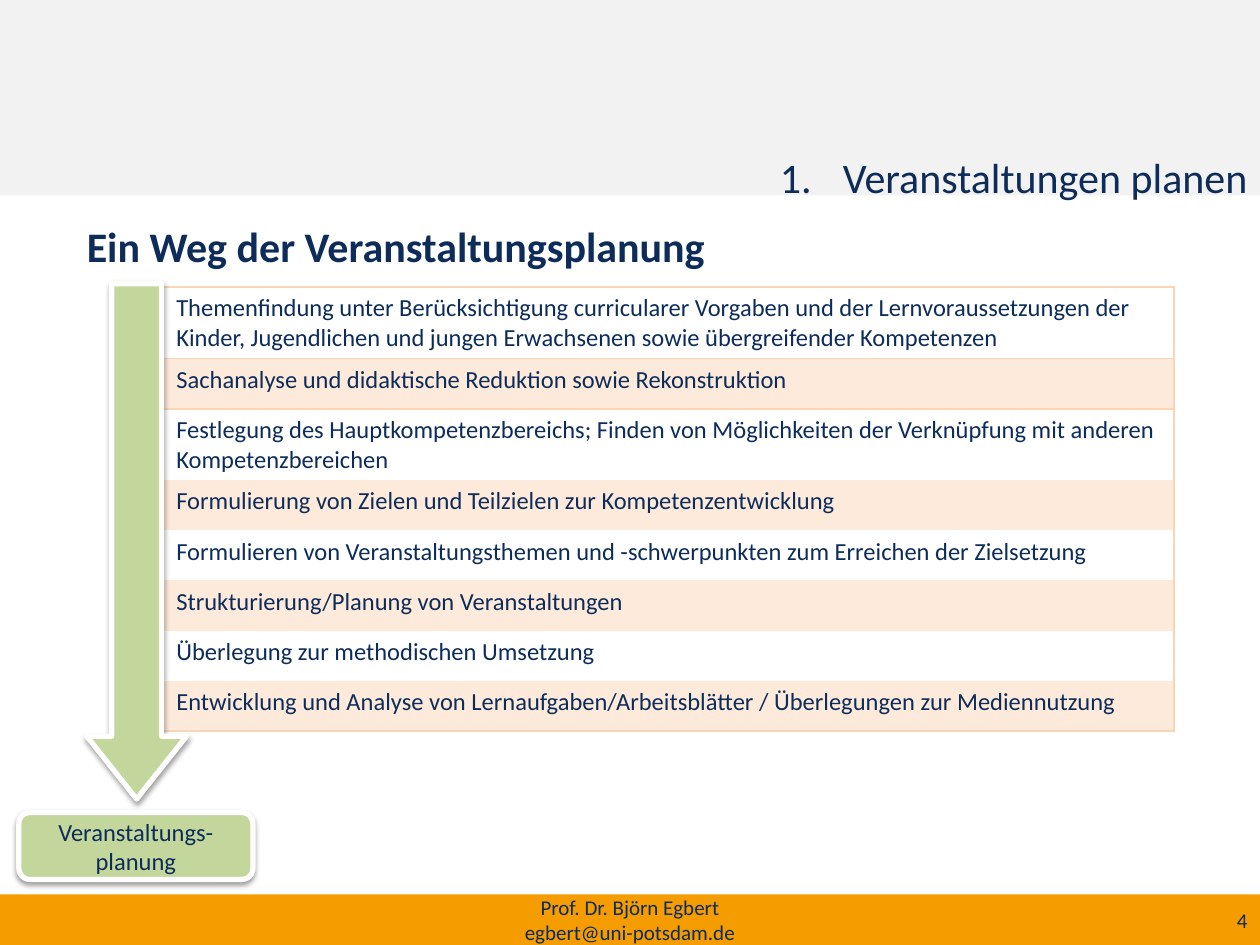
from dataclasses import dataclass
from lxml.etree import SubElement as Sub
from pptx import Presentation
from pptx.dml.color import RGBColor as Rgb
from pptx.enum.shapes import MSO_SHAPE as Kind
from pptx.enum.text import MSO_ANCHOR as Anchor, PP_ALIGN as Align
from pptx.oxml.ns import qn
from pptx.util import Cm, Pt


@dataclass(frozen=True)
class Theme:
    face: str = "Calibri"
    ink: str = "0D2C5A"
    white: str = "FFFFFF"
    grey: str = "F2F2F2"
    amber: str = "F59C00"
    green: str = "C3D69B"
    peach: str = "FDEADA"
    rule: str = "FCD5B5"
    head: int = 24
    body: int = 14
    small: int = 12


LOOK = Theme()
STEPS = [
    "Themenfindung unter Berücksichtigung curricularer Vorgaben und der Lernvoraussetzungen der "
    "Kinder, Jugendlichen und jungen Erwachsenen sowie übergreifender Kompetenzen",
    "Sachanalyse und didaktische Reduktion sowie Rekonstruktion",
    "Festlegung des Hauptkompetenzbereichs; Finden von Möglichkeiten der Verknüpfung mit anderen "
    "Kompetenzbereichen",
    "Formulierung von Zielen und Teilzielen zur Kompetenzentwicklung",
    "Formulieren von Veranstaltungsthemen und -schwerpunkten zum Erreichen der Zielsetzung",
    "Strukturierung/Planung von Veranstaltungen",
    "Überlegung zur methodischen Umsetzung",
    "Entwicklung und Analyse von Lernaufgaben/Arbeitsblätter / Überlegungen zur Mediennutzung",
]


def paint(fill, tone):
    fill.solid()
    fill.fore_color.rgb = Rgb.from_string(tone)


def write(frame, text, size, align=Align.LEFT, anchor=Anchor.TOP, bold=False):
    frame.word_wrap = True
    frame.vertical_anchor = anchor
    frame.text = text
    for para in frame.paragraphs:
        para.alignment = align
        for run in para.runs:
            font = run.font
            font.name, font.size, font.bold = LOOK.face, Pt(size), bold
            font.color.rgb = Rgb.from_string(LOOK.ink)


def add_text(slide, box, text, size, **style):
    frame = slide.shapes.add_textbox(*map(Cm, box)).text_frame
    write(frame, text, size, **style)
    return frame


def add_form(slide, kind, box, tone):
    form = slide.shapes.add_shape(kind, *map(Cm, box))
    form.shadow.inherit = False
    paint(form.fill, tone)
    form.line.fill.background()
    return form


def lift(form):
    paint(form.line.fill, LOOK.white)
    form.line.width = Pt(3)
    glow = form.element.spPr.find(qn("a:effectLst"))
    drop = Sub(glow, qn("a:outerShdw"), blurRad=str(Pt(3.1)), dist=str(Pt(1.6)),
               dir="5400000", rotWithShape="0")
    tone = Sub(drop, qn("a:srgbClr"), val="000000")
    Sub(tone, qn("a:alpha"), val="38000")


def add_head(slide, box):
    x, y, w, h = box
    add_form(slide, Kind.RECTANGLE, box, LOOK.grey)
    frame = add_text(slide, (x + 3.51, y + 2.92, w - 3.51, 1.6),
                     "Veranstaltungen planen", LOOK.head, align=Align.RIGHT)
    props = frame.paragraphs[0]._p.get_or_add_pPr()
    props.set("marL", str(Cm(1.27)))
    props.set("indent", str(-Cm(1.27)))
    Sub(Sub(props, qn("a:buClr")), qn("a:srgbClr"), val=LOOK.ink)
    Sub(props, qn("a:buFont"), typeface="+mj-lt")
    Sub(props, qn("a:buAutoNum"), type="arabicPeriod")


def add_foot(slide, box):
    x, y, w, h = box
    add_form(slide, Kind.RECTANGLE, box, LOOK.amber)
    add_text(slide, (x + w - 6.1, y, 6.1, h), "4", LOOK.small,
             align=Align.RIGHT, anchor=Anchor.MIDDLE)
    add_text(slide, (x + (w - 8.6) / 2, y, 8.6, h),
             "Prof. Dr. Björn Egbert\vegbert@uni-potsdam.de", LOOK.small,
             align=Align.CENTER, anchor=Anchor.MIDDLE)


def edge(cell, shown):
    props = cell._tc.get_or_add_tcPr()
    for side in "LRTB":
        line = Sub(props, qn(f"a:ln{side}"), w=str(Pt(1)))
        if side in shown:
            Sub(Sub(line, qn("a:solidFill")), qn("a:srgbClr"), val=LOOK.rule)
        else:
            Sub(line, qn("a:noFill"))


def add_steps(slide, box):
    x, y, w, h = box
    grid = slide.shapes.add_table(len(STEPS), 1, *map(Cm, box)).table
    grid.first_row = grid.horz_banding = False
    sides = {0: "RTB", 1: "RTB", 2: "RT", len(STEPS) - 1: "RB"}
    for i, text in enumerate(STEPS):
        grid.rows[i].height = Cm(1.4 if i in (0, 2) else 1.01)
        cell = grid.cell(i, 0)
        write(cell.text_frame, text, LOOK.body)
        edge(cell, sides.get(i, "R"))
        paint(cell.fill, LOOK.peach if i % 2 else LOOK.white)


def add_path(slide, box):
    x, y, w, h = box
    goal = add_form(slide, Kind.ROUNDED_RECTANGLE, (x, y + h - 1.35, 4.72, 1.35), LOOK.green)
    lift(goal)
    write(goal.text_frame, "Veranstaltungs-planung", LOOK.body,
          align=Align.CENTER, anchor=Anchor.MIDDLE)
    arrow = add_form(slide, Kind.DOWN_ARROW, (x + 1.37, y, 2.01, 10.39), LOOK.green)
    arrow.adjustments[0] = 0.5
    arrow.adjustments[1] = 0.63
    lift(arrow)


def main():
    deck = Presentation()
    deck.slide_width, deck.slide_height = Cm(25.4), Cm(19.05)
    slide = deck.slides.add_slide(deck.slide_layouts[6])
    add_head(slide, (0, 0, 25.4, 3.94))
    add_foot(slide, (0, 18.03, 25.4, 1.02))
    add_steps(slide, (3.3, 5.79, 20.37, 8.92))
    add_path(slide, (0.38, 5.72, 4.72, 12.01))
    add_text(slide, (1.5, 4.32, 21.89, 1.6), "Ein Weg der Veranstaltungsplanung",
             LOOK.head, bold=True)
    deck.save("out.pptx")


if __name__ == "__main__":
    main()
